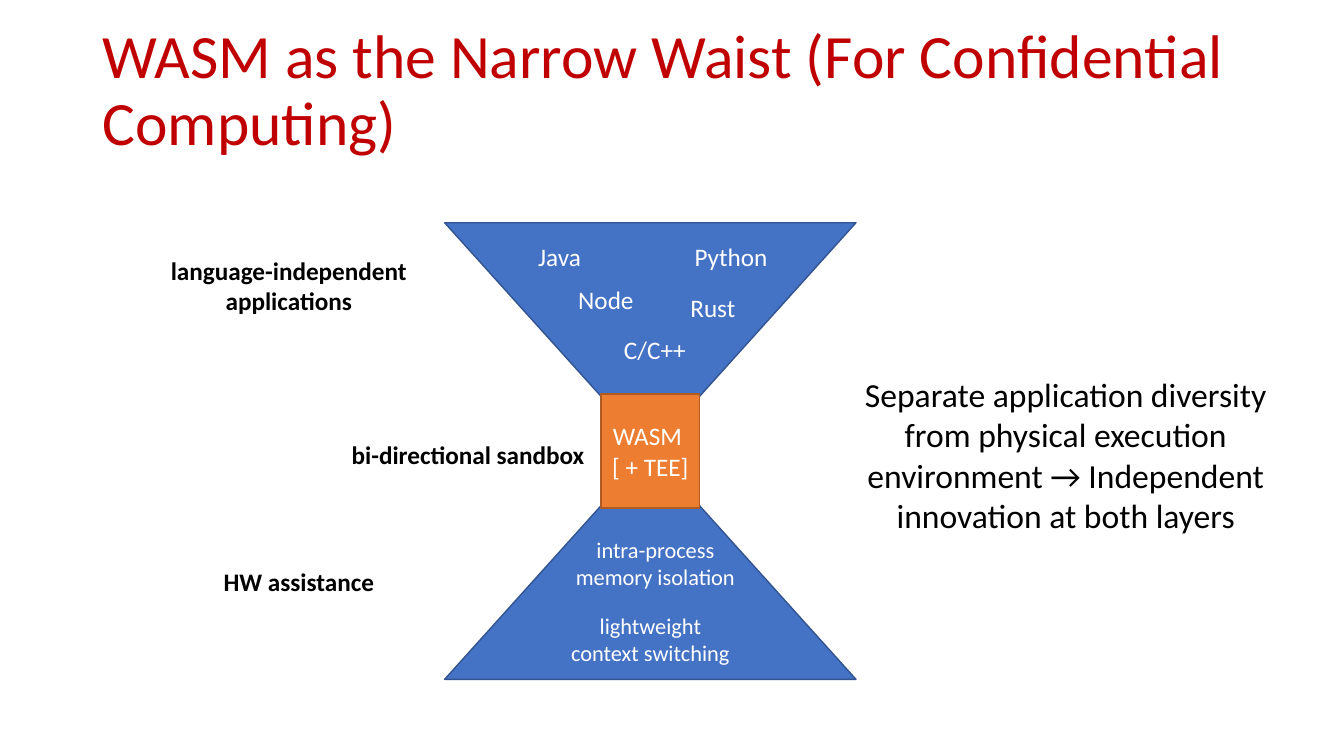
from pptx import Presentation
from pptx.dml.color import RGBColor
from pptx.enum.shapes import MSO_SHAPE
from pptx.enum.text import MSO_ANCHOR, PP_ALIGN
from pptx.util import Pt

PX = 9144  # EMU per px, 100 px to the inch
COLORS = {
    "red": "C00000", "blue": "4472C4", "navy": "325491",
    "orange": "ED7D31", "rust": "AF5C24", "white": "FFFFFF", "black": "000000",
}


class Deck:
    font = "Calibri"

    def __init__(self, width, height):
        self.prs = Presentation()
        self.prs.slide_width, self.prs.slide_height = width * PX, height * PX
        self.slide = self.prs.slides.add_slide(self.prs.slide_layouts[6])

    def color(self, name):
        return RGBColor.from_string(COLORS[name])

    def label(self, shape, text, size, color, bold=False, align=PP_ALIGN.CENTER,
              anchor=MSO_ANCHOR.MIDDLE, spacing=None):
        frame = shape.text_frame
        frame.word_wrap = True
        frame.vertical_anchor = anchor
        frame.text = text
        for para in frame.paragraphs:
            para.alignment = align
            para.line_spacing = spacing
            para.font.name = self.font
            para.font.size = Pt(size)
            para.font.bold = bold
            para.font.color.rgb = self.color(color)

    def text(self, box, text, size, color="black", **style):
        shape = self.slide.shapes.add_textbox(*[n * PX for n in box])
        self.label(shape, text, size, color, **style)

    def shape(self, kind, box, fill, line=None, text=""):
        shape = self.slide.shapes.add_shape(kind, *[n * PX for n in box])
        shape.shadow.inherit = False
        shape.fill.solid()
        shape.fill.fore_color.rgb = self.color(fill)
        if line:
            shape.line.color.rgb = self.color(line)
            shape.line.width = Pt(1)
        else:
            shape.line.fill.background()
        if text:
            frame = shape.text_frame
            frame.margin_left = frame.margin_right = 0
            self.label(shape, text, 18, "white")


def main():
    deck = Deck(1333, 750)

    # Title
    deck.text((92, 21, 1150, 141),
              "WASM as the Narrow Waist (For Confidential Computing)",
              44, "red", align=PP_ALIGN.LEFT, spacing=0.9)

    # Hourglass and its waist
    deck.shape(MSO_SHAPE.FLOWCHART_COLLATE, (441, 221, 408, 453), "blue", "navy")
    deck.shape(MSO_SHAPE.RECTANGLE, (596, 391, 98, 113), "orange", "rust",
               "WASM \n[ + TEE]")

    # Languages in the upper half
    for name, box in (
        ("Java", (519, 242, 72, 25)),
        ("Python", (672, 244, 106, 21)),
        ("C/C++", (605, 334, 89, 25)),
        ("Rust", (664, 292, 86, 27)),
        ("Node", (548, 285, 106, 25)),
    ):
        deck.shape(MSO_SHAPE.RECTANGLE, box, "blue", text=name)

    # Hardware features in the lower half
    deck.text((559, 522, 182, 74), "intra-process memory isolation", 16, "white")
    deck.text((554, 597, 182, 74), "lightweight context switching", 16, "white")

    # Layer labels on the left
    for name, box, align in (
        ("language-independent applications", (143, 248, 287, 71), PP_ALIGN.CENTER),
        ("bi-directional sandbox", (339, 431, 287, 40), PP_ALIGN.LEFT),
        ("HW assistance", (185, 557, 223, 40), PP_ALIGN.CENTER),
    ):
        deck.text(box, name, 18, bold=True, align=align, anchor=MSO_ANCHOR.TOP)

    # Takeaway on the right
    deck.text((831, 366, 452, 172),
              "Separate application diversity from physical execution "
              "environment → Independent innovation at both layers",
              24, anchor=MSO_ANCHOR.TOP)

    deck.prs.save("out.pptx")


if __name__ == "__main__":
    main()
